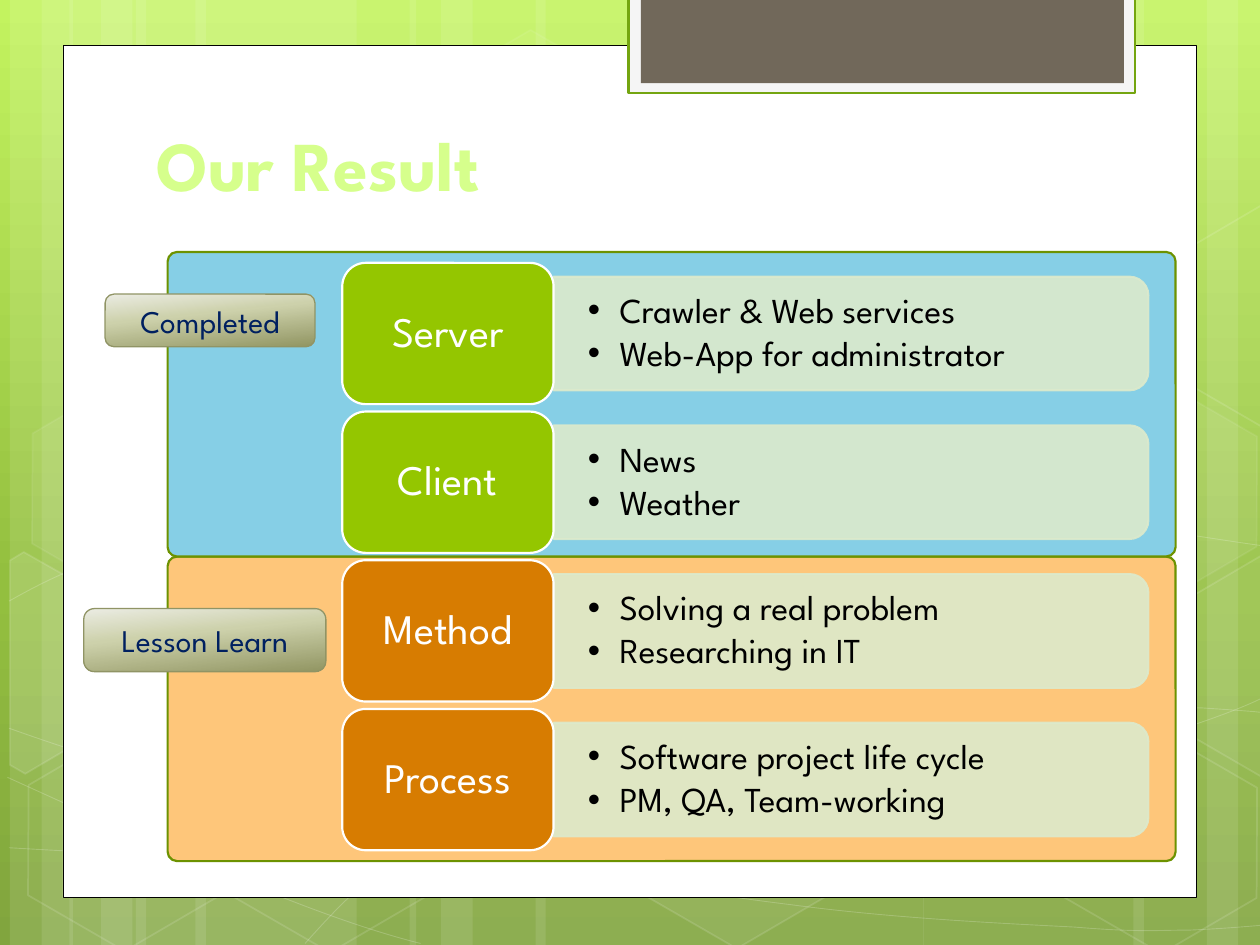
from copy import deepcopy

from pptx import Presentation
from pptx.dml.color import RGBColor as RGB
from pptx.enum.shapes import MSO_SHAPE as SHAPE
from pptx.enum.text import MSO_ANCHOR as ANCHOR, PP_ALIGN as ALIGN
from pptx.oxml import parse_xml
from pptx.oxml.ns import nsdecls, qn
from pptx.util import Cm, Pt

FONT = "League Spartan"
NS = nsdecls("a")
COLORS = {
    "white": "FFFFFF", "black": "000000", "tab": "F5F5F5", "edge": "74A510",
    "brown": "71685A", "rim": "6D9200", "blue": "86CFE6", "peach": "FEC67A",
    "bar": "DCEACC", "green": "94C600", "orange": "D77C01", "title": "D6FF8C",
    "outline": "434128", "navy": "002060", "tag": "909465",
}
SKY = [(0, "C3F35F"), (0.62, "93BF3F"), (1, "81A53E")]
METAL = [(0, "EBECE3"), (0.4, "CDD1AB"), (1, "929663")]

# Stripe left and width, measured from the edge of its group
STRIPES = [(2.54, 4.45), (0, 1.27), (0.64, 2.11)]
# Left, top, fill opacity, line opacity
HEXES = [
    (8.48, 0.91, 4, 8), (12.62, 14.96, 6, 12), (0.28, 15.01, 0, 12),
    (0.36, 7.92, 7, 8), (4.42, 15.04, 0, 12), (19.13, 11.51, 10, 12),
    (21.18, 15.06, 0, 12), (21.18, 7.98, 7, 8),
]
# Cut hexagons at the slide edges: fill opacity, corners
CUTS = [
    (10, [(0.2, 11.3), (0.48, 11.13), (2.44, 12.24), (2.41, 14.48), (0.51, 15.6), (0.2, 15.42)]),
    (4, [(23.52, 12.32), (25.43, 11.2), (25.63, 11.33), (25.63, 15.57), (25.45, 15.67), (23.52, 14.55)]),
    (0, [(23.52, 5.26), (25.43, 4.14), (25.65, 4.27), (25.63, 8.51), (25.45, 8.61), (23.52, 7.49)]),
]
# Bezier curves: a start, then three points for each segment
CURVES = [
    [(0.18, 17.09), (1.55, 17.17), (2.92, 17.25), (4.83, 17.22), (6.73, 17.2), (9.09, 17.15),
     (11.63, 16.89), (14.17, 16.64), (17.78, 16.15), (20.12, 15.67), (22.43, 15.19),
     (24.82, 14.43), (25.58, 14)],
    [(0.18, 12.12), (0.91, 11.71), (1.65, 11.33), (3.07, 10.95), (4.52, 10.57), (6.58, 10.01),
     (8.81, 9.83), (11.07, 9.65), (13.82, 9.63), (16.61, 9.83), (19.41, 10.01),
     (24.05, 10.82), (25.58, 11.02)],
    [(0.15, 15.67), (3.23, 17.07), (6.27, 18.47), (8.48, 19.02)],
    [(0.18, 14.68), (0.97, 14.96), (1.78, 15.24), (3.25, 15.65), (4.72, 16.03), (6.93, 16.66),
     (9.07, 17.09), (11.18, 17.53), (13.84, 17.98), (15.95, 18.24), (18.06, 18.52),
     (20.32, 18.62), (21.67, 18.69), (22.99, 18.8), (23.34, 18.75), (24, 18.75),
     (24.66, 18.72), (25.12, 18.68), (25.58, 18.64)],
    [(6.15, 19.02), (6.6, 18.52), (7.06, 18.01), (7.67, 17.55), (8.28, 17.09), (9.14, 16.59),
     (9.86, 16.23), (10.57, 15.88), (11, 15.72), (11.94, 15.47), (12.85, 15.21),
     (14.55, 14.86), (15.44, 14.68), (16.36, 14.5), (16.48, 14.5), (17.27, 14.45),
     (18.06, 14.38), (19.3, 14.3), (20.17, 14.27), (21.06, 14.25), (22.5, 14.27),
     (22.5, 14.27), (22.5, 14.27), (24.21, 14.27), (24.21, 14.27), (24.66, 14.3),
     (25.1, 14.33), (25.32, 14.35), (25.55, 14.38), (25.48, 14.35), (25.55, 14.38)],
]
ROWS = [
    ("Server", "green", ["Crawler & Web services", "Web-App for administrator"]),
    ("Client", "green", ["News", "Weather"]),
    ("Method", "orange", ["Solving a real problem", "Researching in IT"]),
    ("Process", "orange", ["Software project life cycle", "PM, QA, Team-working"]),
]


def tint(fill, name, alpha):
    """Fill with a named colour at an opacity in percent; 0 means none."""
    if not name or not alpha:
        fill.background()
        return
    fill.solid()
    fill.fore_color.rgb = RGB.from_string(COLORS[name])
    if alpha < 100:
        node = fill._xPr.find(qn("a:solidFill"))[0]
        node.append(parse_xml(f'<a:alpha {NS} val="{alpha * 1000}"/>'))


def paint(shape, fill=None, line=None, width=1.25, alpha=100, edge=100):
    shape.shadow.inherit = False
    tint(shape.fill, fill, alpha)
    tint(shape.line.fill, line, edge)
    if line:
        shape.line.width = Pt(width)


def blend(fill, root, stops, angle):
    fill.gradient()
    fill.gradient_angle = 360 - angle
    marks = next(root.iter(qn("a:gsLst")))
    marks.append(deepcopy(marks[-1]))
    for stop, (place, color) in zip(fill.gradient_stops, stops):
        stop.position = place
        stop.color.rgb = RGB.from_string(color)


def block(slide, kind, box):
    return slide.shapes.add_shape(kind, *map(Cm, box))


def style(para, size, color, bold=None, align=None):
    font = para.font
    font.name, font.size, font.bold = FONT, Pt(size), bold
    font.color.rgb = RGB.from_string(COLORS[color])
    para.alignment = align


def trace(slide, x, y, points, close):
    start, *rest = [(Cm(x + a), Cm(y + b)) for a, b in points]
    pen = slide.shapes.build_freeform(*start)
    pen.add_line_segments(rest, close=close)
    return pen.convert_to_shape()


def bend(shape):
    """Join every three line segments into one cubic curve."""
    track = next(shape._element.iter(qn("a:path")))
    lines = track.findall(qn("a:lnTo"))
    for i in range(0, len(lines), 3):
        curve = parse_xml(f"<a:cubicBezTo {NS}/>")
        for line in lines[i:i + 3]:
            curve.append(line[0])
            track.remove(line)
        track.append(curve)


def backdrop(slide, box):
    x, y, w, h = box
    blend(slide.background.fill, slide._element, SKY, 90)
    # Stripes: two groups on the left, one mirrored on the right, one between
    bars = [(edge + dx, sw) for edge in (0.2, 1.4) for dx, sw in STRIPES]
    bars += [(w + 0.2 - dx - sw, sw) for dx, sw in STRIPES]
    bars += [(10.8, 7.82), (8.26, 1.27), (8.89, 2.11)]
    for left, sw in bars:
        paint(block(slide, SHAPE.RECTANGLE, (x + left, y, sw, h)), "white", alpha=10)
    # Thin curves
    for knots in CURVES:
        curve = trace(slide, x, y, knots, False)
        bend(curve)
        paint(curve, None, "white", 0.5, edge=20)
    # Whole and cut hexagons
    for left, top, alpha, edge in HEXES:
        hexa = block(slide, SHAPE.HEXAGON, (x + left, y + top, 4.45, 3.86))
        hexa.adjustments[0] = 0.285
        hexa.rotation = 30
        paint(hexa, "white", "white", 1, alpha, edge)
    for alpha, points in CUTS:
        paint(trace(slide, x, y, points, True), "white", "white", 1, alpha, 12)


def card(slide, box):
    x, y, w, h = box
    paint(block(slide, SHAPE.RECTANGLE, box), "white", "black", 0.5)
    paint(block(slide, SHAPE.RECTANGLE, (x + 11.4, y - 0.96, 10.21, 1.93)), "tab", "edge")
    paint(block(slide, SHAPE.RECTANGLE, (x + 11.65, y - 0.96, 9.74, 1.73)), "brown")


def panels(slide, box):
    x, y, w, h = box
    for i, color in ((1, "peach"), (0, "blue")):
        panel = block(slide, SHAPE.ROUNDED_RECTANGLE, (x, y + i * h / 2, w, h / 2))
        panel.adjustments[0] = 0.031
        paint(panel, color, "rim")


def row(slide, box, name, color, items):
    x, y, w, h = box
    side, thick = 4.26, 2.29
    span, mid = w - side, y + h / 2
    # Bar, a tall shape turned on its side
    center = x + side + span / 2
    bar = block(slide, SHAPE.ROUND_2_SAME_RECTANGLE,
                (center - thick / 2, mid - span / 2, thick, span))
    bar.rotation = 90
    paint(bar, "bar", "bar", alpha=90, edge=90)
    # Bullets
    note = slide.shapes.add_textbox(*map(Cm, (x + side, mid - 1.03, span - 0.13, 2.06)))
    frame = note.text_frame
    frame.word_wrap, frame.vertical_anchor = True, ANCHOR.MIDDLE
    frame.margin_left = frame.margin_right = Cm(0.69)
    frame.margin_top = frame.margin_bottom = Cm(0.35)
    frame.text = "\n".join(items)
    for para in frame.paragraphs:
        para.line_spacing, para.space_after = 0.9, Pt(3)
        props = para._p.get_or_add_pPr()
        props.set("marL", str(Cm(0.64)))
        props.set("indent", str(-Cm(0.64)))
        props.append(parse_xml(f'<a:buFont {NS} typeface="Arial"/>'))
        props.append(parse_xml(f'<a:buChar {NS} char="•"/>'))
        style(para, 20, "black")
    # Label
    label = block(slide, SHAPE.ROUNDED_RECTANGLE, (x, y, side, h))
    paint(label, color, "white")
    label.text_frame.text = name
    para = label.text_frame.paragraphs[0]
    para.line_spacing, para.space_after = 0.9, Pt(8.4)
    style(para, 24, "white", align=ALIGN.CENTER)


def stack(slide, box, gap=0.15):
    x, y, w, h = box
    pitch = (h + gap) / len(ROWS)
    for i, entry in enumerate(ROWS):
        row(slide, (x, y + i * pitch, w, pitch - gap), *entry)


def title(slide, box, text):
    frame = slide.shapes.add_textbox(*map(Cm, box)).text_frame
    frame.word_wrap = True
    frame.text = text
    para = frame.paragraphs[0]
    style(para, 40, "title", True)
    line = (f'<a:ln {NS} w="12700"><a:solidFill>'
            f'<a:srgbClr val="{COLORS["outline"]}"/></a:solidFill></a:ln>')
    para._p.pPr.find(qn("a:defRPr")).insert(0, parse_xml(line))


def tag(slide, box, text):
    shape = block(slide, SHAPE.ROUNDED_RECTANGLE, box)
    paint(shape, None, "tag", 0.75)
    blend(shape.fill, shape._element, METAL, 84)
    shape.text_frame.text = text
    style(shape.text_frame.paragraphs[0], 18, "navy", align=ALIGN.CENTER)


def main():
    deck = Presentation()
    deck.slide_width, deck.slide_height = Cm(25.4), Cm(19.05)
    slide = deck.slides.add_slide(deck.slide_layouts[6])
    backdrop(slide, (0, 0, 25.4, 19.05))
    card(slide, (1.27, 0.91, 22.86, 17.19))
    panels(slide, (3.38, 5.08, 20.32, 12.28))
    stack(slide, (6.9, 5.3, 16.25, 11.84))
    title(slide, (2.9, 2.33, 19.51, 3.18), "Our Result")
    tag(slide, (1.69, 12.27, 4.88, 1.27), "Lesson Learn")
    tag(slide, (2.12, 5.93, 4.23, 1.06), "Completed")
    deck.save("out.pptx")


if __name__ == "__main__":
    main()
